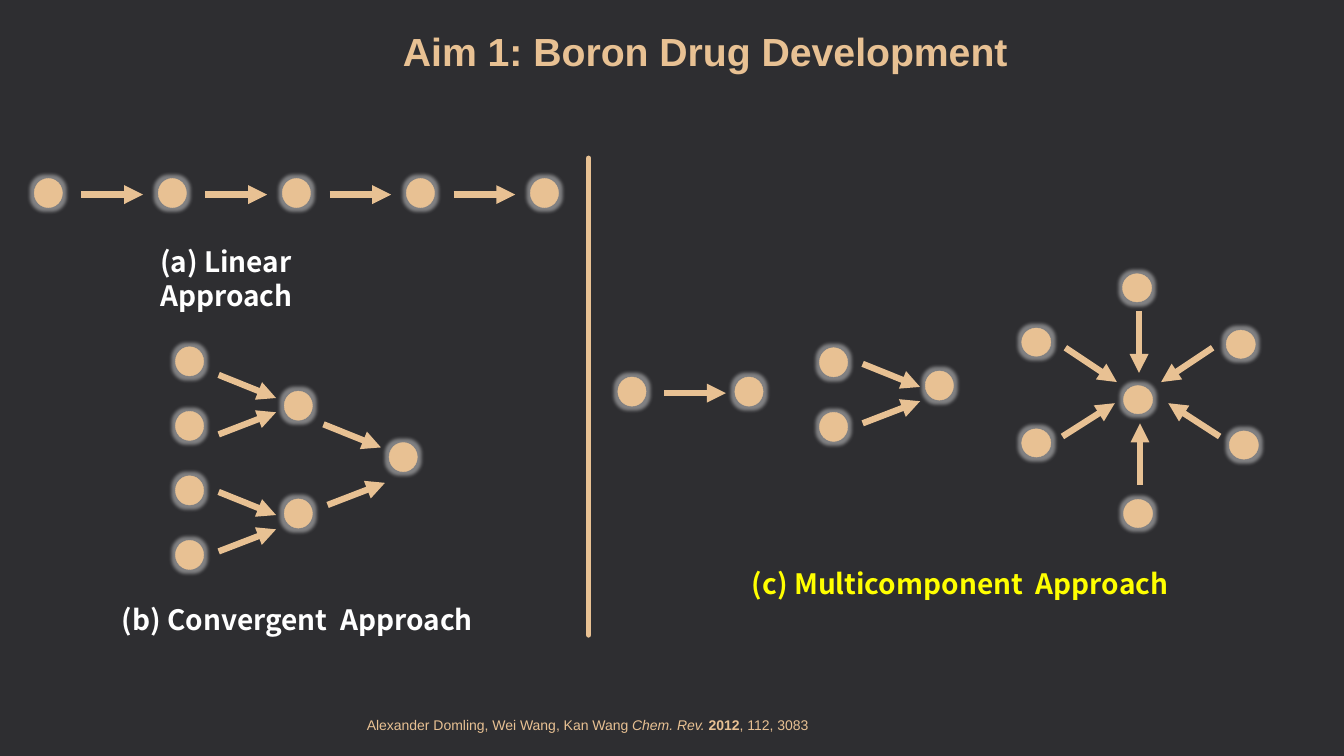
import pptx
import pptx.dml.color
import pptx.enum.shapes
import pptx.enum.text
import pptx.oxml
import pptx.oxml.ns
import pptx.util

Pt = pptx.util.Pt
RGBColor = pptx.dml.color.RGBColor
DARK = RGBColor(0x2E, 0x2E, 0x31)
SAND = RGBColor(0xE8, 0xC1, 0x93)
WHITE = RGBColor(0xFF, 0xFF, 0xFF)
YELLOW = RGBColor(0xFF, 0xFF, 0x00)
NAMESPACE = pptx.oxml.ns.nsdecls("a")
GLOW = (
    f'<a:effectLst {NAMESPACE}><a:glow rad="63500"><a:srgbClr val="FFFFFF">'
    '<a:alpha val="40000"/></a:srgbClr></a:glow></a:effectLst>'
)


class Diagram:
    node_width, node_height = 20.2, 20.9
    pair_gap = 46.1
    heading_font = "Arial"
    caption_font = "Noto Sans CJK KR"

    def __init__(self, slide):
        self.slide = slide

    def add_text(self, paragraph, text, color, **font_values):
        run = paragraph.add_run()
        run.text = text
        run.font.color.rgb = color
        for name, value in font_values.items():
            setattr(run.font, name, value)

    def title(self, text, left, top, width, height):
        shape = self.slide.shapes.add_shape(
            pptx.enum.shapes.MSO_SHAPE.RECTANGLE, Pt(left), Pt(top), Pt(width), Pt(height))
        shape.shadow.inherit = False
        shape.fill.solid()
        shape.fill.fore_color.rgb = DARK
        shape.line.fill.background()
        shape.text_frame.word_wrap = True
        paragraph = shape.text_frame.paragraphs[0]
        paragraph.alignment = pptx.enum.text.PP_ALIGN.CENTER
        paragraph.line_spacing = 1.5
        self.add_text(paragraph, text, SAND, name=self.heading_font, size=Pt(28), bold=True)

    def text_line(self, left, top, width, height):
        """Add an empty unwrapped text box and return its paragraph."""
        shape = self.slide.shapes.add_textbox(Pt(left), Pt(top), Pt(width), Pt(height))
        shape.text_frame.word_wrap = False
        return shape.text_frame.paragraphs[0]

    def caption(self, text, left, top, width, color=WHITE):
        paragraph = self.text_line(left, top, width, 31.7)
        self.add_text(paragraph, text, color, name=self.caption_font, size=Pt(20), bold=True)

    def citation(self, runs, left, top, width, height):
        paragraph = self.text_line(left, top, width, height)
        for text, emphasis in runs:
            self.add_text(paragraph, text, SAND, name=self.heading_font, size=Pt(10), **emphasis)

    def line(self, start, end, width):
        connector = self.slide.shapes.add_connector(
            pptx.enum.shapes.MSO_CONNECTOR.STRAIGHT, *(Pt(value) for value in (*start, *end)))
        connector.line.color.rgb = SAND
        connector.line.width = Pt(width)
        properties = connector._element.spPr
        properties.append(pptx.oxml.parse_xml(f"<a:effectLst {NAMESPACE}/>"))
        return connector

    def divider(self, start, end):
        connector = self.line(start, end, 3.75)
        connector.line._get_or_add_ln().set("cap", "rnd")

    def arrow(self, start, end):
        connector = self.line(start, end, 4.5)
        connector.line._get_or_add_ln().append(
            pptx.oxml.parse_xml(f'<a:tailEnd {NAMESPACE} type="triangle"/>'))

    def node(self, center_x, center_y, rotation=0):
        shape = self.slide.shapes.add_shape(
            pptx.enum.shapes.MSO_SHAPE.OVAL,
            Pt(center_x - self.node_width / 2), Pt(center_y - self.node_height / 2),
            Pt(self.node_width), Pt(self.node_height))
        shape.rotation = rotation
        shape.fill.solid()
        shape.fill.fore_color.rgb = SAND
        shape.line.color.rgb = SAND
        shape.line.width = Pt(0.25)
        shape._element.spPr.append(pptx.oxml.parse_xml(GLOW))

    def chain(self, x, y, count, step, arrow_offset):
        for index in range(count):
            node_x = x + index * step
            self.node(node_x, y)
            if index < count - 1:
                arrow_x = node_x + arrow_offset
                self.arrow((arrow_x, y + 1.1), (arrow_x + 44, y + 1.1))

    def converging_arrows(self, upper, lower):
        for (x, y), rise in ((upper, 16.5), (lower, -15.8)):
            self.arrow((x, y), (x + 41, y + rise))

    def merging_pair(self, x, y, arrow_y, target):
        """Draw two stacked nodes whose arrows meet at a target node."""
        for row in range(2):
            self.node(x, y + row * self.pair_gap)
        self.node(*target)
        arrow_x = x + 20.8
        self.converging_arrows((arrow_x, arrow_y), (arrow_x, arrow_y + 42.5))

    def star(self, center, spokes):
        self.node(*center, rotation=270)
        for satellite, start, end in spokes:
            self.node(*satellite, rotation=270)
            self.arrow(start, end)


def main():
    presentation = pptx.Presentation()
    presentation.slide_width, presentation.slide_height = Pt(960), Pt(540)
    slide = presentation.slides.add_slide(presentation.slide_layouts[6])
    slide.background.fill.solid()
    slide.background.fill.fore_color.rgb = DARK
    diagram = Diagram(slide)

    diagram.title("Aim 1: Boron Drug Development", 193, 0, 621.4, 55.4)
    diagram.citation([
        ("Alexander Domling, Wei Wang, Kan Wang ", {}),
        ("Chem. Rev. ", {"italic": True}),
        ("2012", {"bold": True}),
        (", 112, 3083", {}),
    ], 254.9, 508.3, 334.8, 19.4)
    diagram.divider((420.5, 113), (420.5, 453.6))

    diagram.chain(34.5, 137.9, count=5, step=88.6, arrow_offset=23.7)
    diagram.caption("(a) Linear  Approach", 107.3, 171.4, 211.7)

    diagram.merging_pair(135.4, 258.1, 267.8, target=(213.1, 289.8))
    diagram.merging_pair(135.4, 350.3, 351.4, target=(213.1, 366.8))
    diagram.converging_arrows((231.1, 303.1), (234, 360.7))
    diagram.node(288, 326.5)
    diagram.caption("(b) Convergent  Approach", 79.9, 427, 266.4)

    diagram.chain(451.4, 279.7, count=2, step=83.6, arrow_offset=23.1)
    diagram.merging_pair(595.4, 258.8, 259.9, target=(671, 275.4))
    diagram.star((812.9, 285.5), [
        ((812.2, 205.6), (813.6, 222), (813.6, 266.4)),
        ((886.3, 245.9), (866.2, 248.4), (829.4, 272.9)),
        ((888.5, 317.9), (871.2, 311.8), (834.5, 288)),
        ((812.9, 366.8), (814.3, 346.3), (814.3, 302.4)),
        ((740.2, 316.4), (758.9, 311.8), (796.3, 288)),
        ((740.2, 244.4), (761, 248.4), (797.8, 272.9)),
    ])
    diagram.caption("(c) Multicomponent  Approach", 529.9, 401, 312.5, YELLOW)

    presentation.save("out.pptx")


if __name__ == "__main__":
    main()
